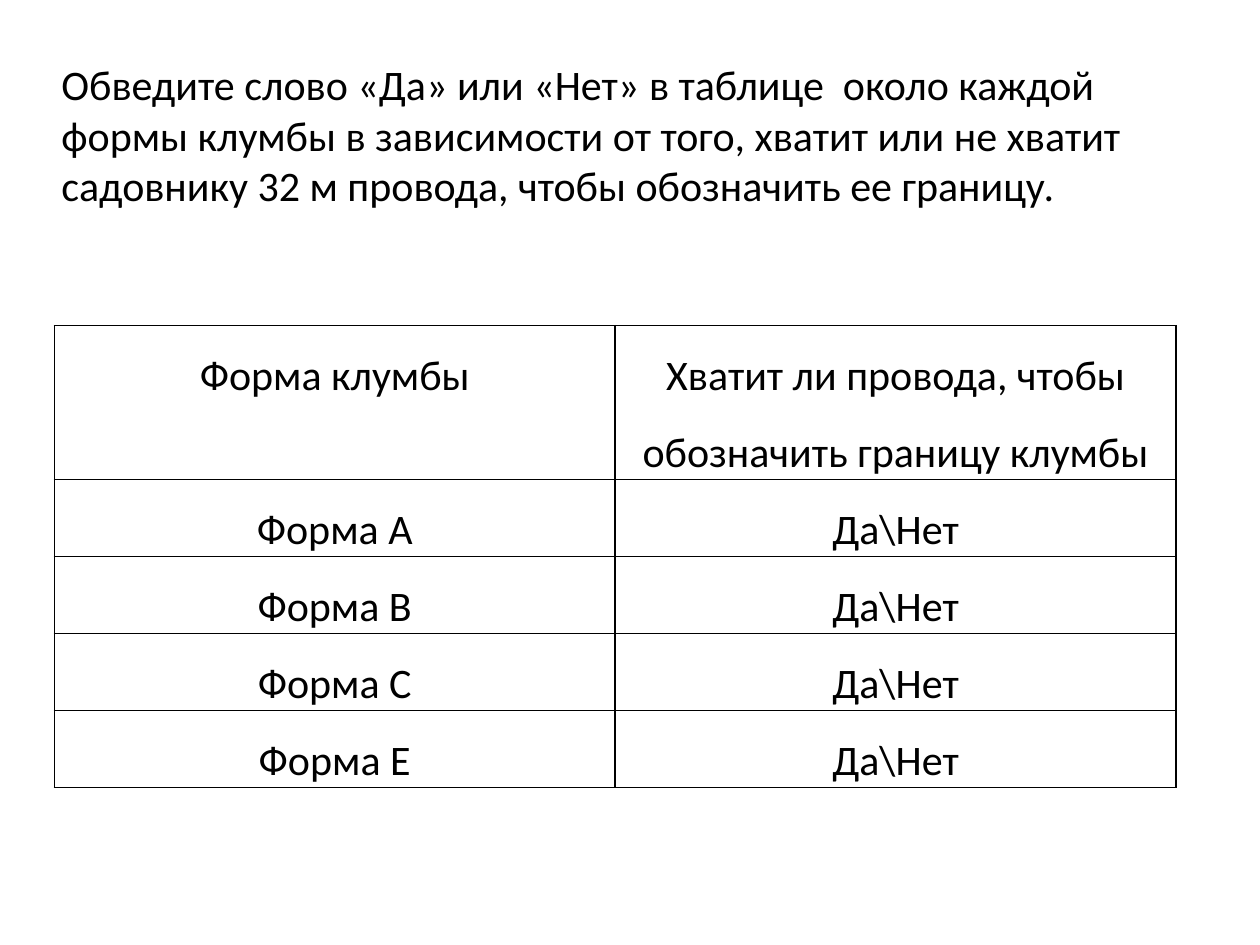
from dataclasses import dataclass

from lxml.etree import SubElement
from pptx import Presentation
from pptx.dml.color import RGBColor
from pptx.enum.text import MSO_ANCHOR, PP_ALIGN
from pptx.oxml.ns import qn
from pptx.util import Pt


@dataclass(frozen=True)
class Theme:
    font: str = "Calibri"
    text_size: float = 24
    ink: str = "000000"
    border_width: float = 1


THEME = Theme()

TASK = (
    "Обведите слово «Да» или «Нет» в таблице  около каждой формы клумбы "
    "в зависимости от того, хватит или не хватит садовнику 32 м провода, "
    "чтобы обозначить ее границу."
)
HEADER = ("Форма клумбы", "Хватит ли провода, чтобы обозначить границу клумбы")
SHAPE_LETTERS = "АВСЕ"
ANSWER = "Да\\Нет"


def write_text(frame, text, *, align=PP_ALIGN.LEFT, line_spacing=1.0):
    frame.word_wrap = True
    paragraph = frame.paragraphs[0]
    paragraph.alignment = align
    paragraph.line_spacing = line_spacing
    run = paragraph.add_run()
    run.text = text
    run.font.name = THEME.font
    run.font.size = Pt(THEME.text_size)
    run.font.color.rgb = RGBColor.from_string(THEME.ink)


def add_borders(cell):
    properties = cell._tc.get_or_add_tcPr()
    for side in ("lnL", "lnR", "lnT", "lnB"):
        line = SubElement(properties, qn(f"a:{side}"), w=str(Pt(THEME.border_width)))
        fill = SubElement(line, qn("a:solidFill"))
        SubElement(fill, qn("a:srgbClr"), val=THEME.ink)


def add_task(slide, left, top, width, height):
    box = slide.shapes.add_textbox(Pt(left), Pt(top), Pt(width), Pt(height))
    box.text_frame.vertical_anchor = MSO_ANCHOR.TOP
    write_text(box.text_frame, TASK)


def add_answer_table(slide, left, top, width, height):
    rows = [HEADER] + [(f"Форма {letter}", ANSWER) for letter in SHAPE_LETTERS]
    frame = slide.shapes.add_table(
        len(rows), len(HEADER), Pt(left), Pt(top), Pt(width), Pt(height)
    )
    table = frame.table
    table.first_row = table.horz_banding = False

    # Equal columns; the header is two answer rows high
    for column in table.columns:
        column.width = Pt(width / len(HEADER))
    unit = height / (len(rows) + 1)
    for index, row in enumerate(table.rows):
        row.height = Pt(unit * (2 if index == 0 else 1))

    # Cells
    for row, texts in zip(table.rows, rows):
        for cell, text in zip(row.cells, texts):
            cell.margin_left = cell.margin_right = Pt(5.4)
            cell.margin_top = cell.margin_bottom = Pt(0)
            add_borders(cell)
            cell.fill.background()
            write_text(
                cell.text_frame, text, align=PP_ALIGN.CENTER, line_spacing=1.5
            )


def main():
    presentation = Presentation()
    presentation.slide_width, presentation.slide_height = Pt(720), Pt(540)
    slide = presentation.slides.add_slide(presentation.slide_layouts[6])
    add_answer_table(slide, 31, 186, 641, 264)
    add_task(slide, 28, 30, 641, 124)
    presentation.save("out.pptx")


if __name__ == "__main__":
    main()
